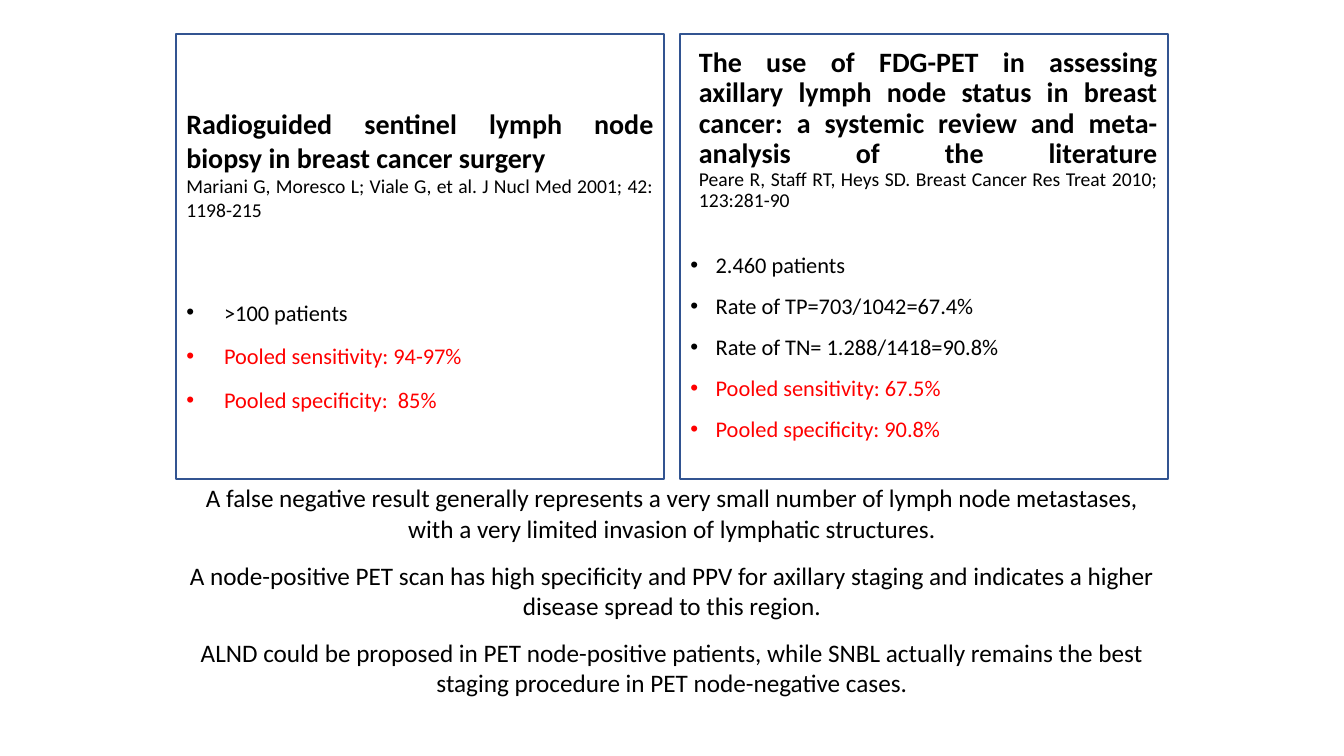
from lxml import etree
from pptx import Presentation
from pptx.dml.color import RGBColor
from pptx.enum import shapes, text
from pptx.oxml.ns import qn
from pptx.util import Emu, Pt

PX = 9525
COLORS = {"ink": "000000", "key": "FF0000", "frame": "325491"}
LEFT, RIGHT, PANEL_W = 168, 648, 464
LIST_Y, LIST_H = 237, 204

LEFT_TITLE = "Radioguided sentinel lymph node biopsy in breast cancer surgery"
LEFT_CITATION = ("Mariani G, Moresco L; Viale G, et al. "
                 "J Nucl Med 2001; 42: 1198-215")
LEFT_FINDINGS = [
    (">100 patients", "ink"),
    ("Pooled sensitivity: 94-97%", "key"),
    ("Pooled specificity:  85%", "key"),
]
RIGHT_TITLE = ("The use of FDG-PET in assessing axillary lymph node status in "
               "breast cancer: a systemic review and meta-analysis of the literature")
RIGHT_CITATION = ("Peare R, Staff RT, Heys SD. "
                  "Breast Cancer Res Treat 2010; 123:281-90")
RIGHT_FINDINGS = [
    ("2.460 patients", "ink"),
    ("Rate of TP=703/1042=67.4%", "ink"),
    ("Rate of TN= 1.288/1418=90.8%", "ink"),
    ("Pooled sensitivity: 67.5%", "key"),
    ("Pooled specificity: 90.8%", "key"),
]
CONCLUSIONS = [
    "A false negative result generally represents a very small number of lymph "
    "node metastases, with a very limited invasion of lymphatic structures.",
    "A node-positive PET scan has high specificity and PPV for axillary staging "
    "and indicates a higher disease spread to this region.",
    "ALND could be proposed in PET node-positive patients, while SNBL actually "
    "remains the best staging procedure in PET node-negative cases.",
]


def px(*lengths):
    return [Emu(n * PX) for n in lengths]


def set_all(obj, values):
    for name, value in values.items():
        setattr(obj, name, value)


def add_box(slide, box):
    return slide.shapes.add_textbox(*px(*box))


def prepare_frame(sp, box, anchor):
    set_all(sp, dict(zip(("left", "top", "width", "height"), px(*box))))
    tf = sp.text_frame
    set_all(tf, {"word_wrap": True, "auto_size": text.MSO_AUTO_SIZE.NONE,
                 "vertical_anchor": anchor})
    return tf


def next_paragraph(tf, first, **values):
    p = tf.paragraphs[0] if first else tf.add_paragraph()
    set_all(p, {"space_before": Pt(0), **values})
    return p


def add_run(p, words, size, color="ink", bold=False):
    r = p.add_run()
    r.text = words
    set_all(r.font, {"name": "Calibri", "size": Pt(size), "bold": bold})
    r.font.color.rgb = RGBColor.from_string(COLORS[color])


def add_bullet(p, indent):
    pPr = p._p.get_or_add_pPr()
    pPr.set("marL", str(indent * PX))
    pPr.set("indent", str(-indent * PX))
    etree.SubElement(pPr, qn("a:buFont")).set("typeface", "Arial")
    etree.SubElement(pPr, qn("a:buChar")).set("char", "•")


def fill_heading(sp, box, title, citation, spacing, one_paragraph):
    tf = prepare_frame(sp, box, text.MSO_ANCHOR.MIDDLE)
    values = {"alignment": text.PP_ALIGN.JUSTIFY, "line_spacing": spacing}
    p = next_paragraph(tf, True, **values)
    add_run(p, title, 20, bold=True)
    if one_paragraph:
        p.add_line_break()
    else:
        p = next_paragraph(tf, False, **values)
    add_run(p, citation, 14)


def fill_findings(sp, box, findings, anchor, indent, spacing):
    tf = prepare_frame(sp, box, anchor)
    for i, (words, color) in enumerate(findings):
        p = next_paragraph(tf, i == 0, line_spacing=spacing, space_after=Pt(12))
        add_bullet(p, indent)
        add_run(p, words, 16, color)


def add_conclusions(slide, box):
    tf = prepare_frame(add_box(slide, box), box, text.MSO_ANCHOR.TOP)
    for i, words in enumerate(CONCLUSIONS):
        p = next_paragraph(tf, i == 0, alignment=text.PP_ALIGN.CENTER,
                           space_after=Pt(12))
        add_run(p, words, 18)


def add_frame(slide, x):
    sp = slide.shapes.add_shape(shapes.MSO_SHAPE.RECTANGLE,
                                *px(x, 32, PANEL_W, 424))
    sp.shadow.inherit = False
    sp.fill.background()
    sp.line.color.rgb = RGBColor.from_string(COLORS["frame"])
    sp.line.width = Pt(1.5)


def main():
    prs = Presentation()
    prs.slide_width, prs.slide_height = px(1280, 720)
    slide = prs.slides.add_slide(prs.slide_layouts[1])

    fill_heading(slide.shapes.title, (656, 64, 456, 120),
                 RIGHT_TITLE, RIGHT_CITATION, 0.9, True)
    fill_findings(slide.placeholders[1], (RIGHT, LIST_Y, PANEL_W, LIST_H),
                  RIGHT_FINDINGS, text.MSO_ANCHOR.TOP, 24, 0.9)
    add_conclusions(slide, (LEFT, 455, 944, 217))

    box = (LEFT, 96, PANEL_W, 120)
    fill_heading(add_box(slide, box), box, LEFT_TITLE, LEFT_CITATION, 1.0, False)
    box = (LEFT, LIST_Y, PANEL_W, LIST_H)
    fill_findings(add_box(slide, box), box, LEFT_FINDINGS,
                  text.MSO_ANCHOR.MIDDLE, 36, 1.0)

    for x in (RIGHT, LEFT):
        add_frame(slide, x)
    prs.save("out.pptx")


if __name__ == "__main__":
    main()
